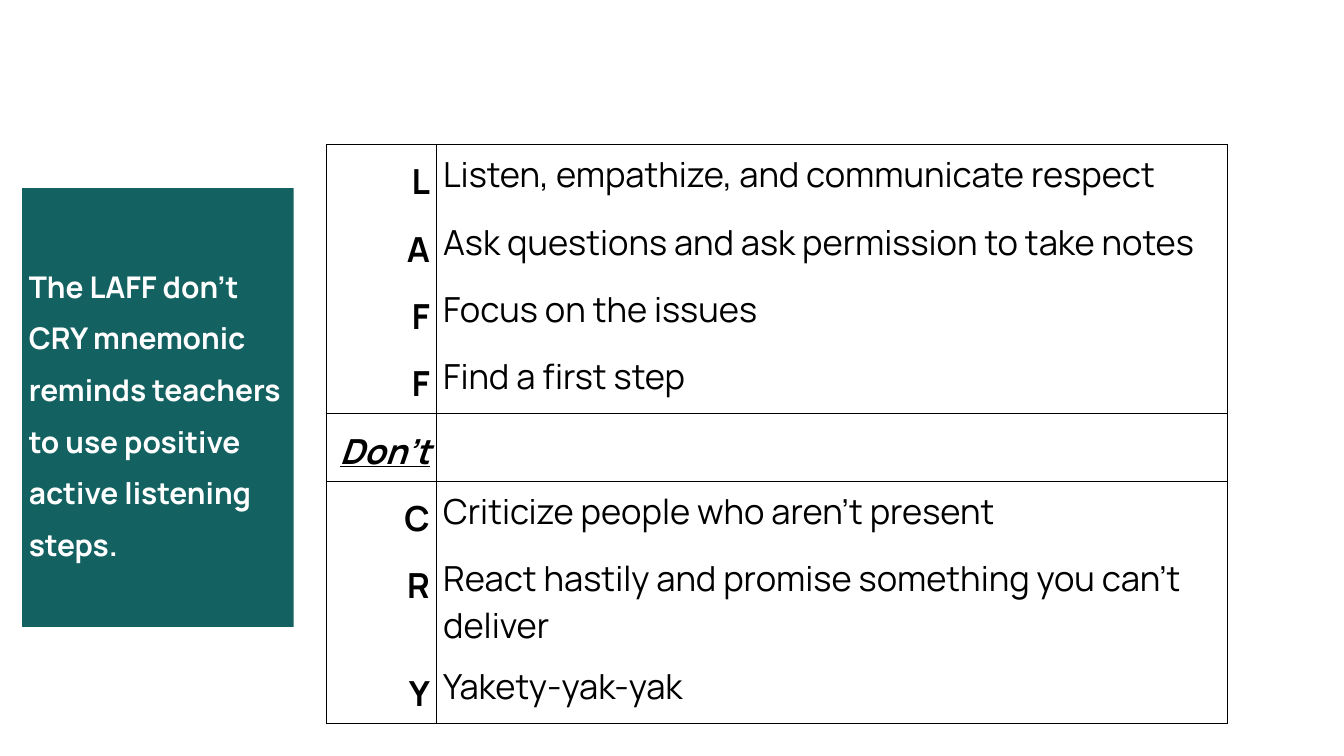
"""Build the LAFF don't CRY slide: a teal caption beside a mnemonic table."""
from lxml.etree import SubElement
from pptx import Presentation
from pptx.dml.color import RGBColor
from pptx.enum.shapes import MSO_SHAPE
from pptx.enum.text import MSO_ANCHOR, PP_ALIGN
from pptx.oxml.ns import qn
from pptx.util import Cm, Pt


def color(hex_string):
    return RGBColor.from_string(hex_string)


def write(frame, text, size=37, ink="000000", bold=False, italic=False,
          underline=False, align=PP_ALIGN.LEFT, spacing=1.0):
    frame.word_wrap = True
    paragraph = frame.paragraphs[0]
    paragraph.alignment = align
    paragraph.line_spacing = spacing
    run = paragraph.add_run()
    run.text = text
    font = run.font
    font.name, font.size = "Manrope", Pt(size)
    font.bold, font.italic, font.underline = bold, italic, underline
    font.color.rgb = color(ink)


STEPS = [
    ("L", "Listen, empathize, and communicate respect"),
    ("A", "Ask questions and ask permission to take notes"),
    ("F", "Focus on the issues"),
    ("F", "Find a first step"),
    ("Don’t", ""),
    ("C", "Criticize people who aren’t present"),
    ("R", "React hastily and promise something you can’t deliver"),
    ("Y", "Yakety-yak-yak"),
]
GROUP_STARTS = {0, 4, 5}
GROUP_ENDS = {3, 4, 7}
ROW_HEIGHT = Cm(2.32)
LETTER_WIDTH, STEP_WIDTH = Cm(4.16), Cm(29.9)
INSET = Cm(0.25)

deck = Presentation()
deck.slide_width, deck.slide_height = Cm(50.8), Cm(28.58)
slide = deck.slides.add_slide(deck.slide_layouts[6])

mnemonic = slide.shapes.add_table(
    len(STEPS), 2, Cm(12.34), Cm(5.46),
    LETTER_WIDTH + STEP_WIDTH, ROW_HEIGHT * len(STEPS)).table
mnemonic.first_row = mnemonic.horz_banding = False
mnemonic.columns[0].width, mnemonic.columns[1].width = LETTER_WIDTH, STEP_WIDTH

for index, (letter, step) in enumerate(STEPS):
    mnemonic.rows[index].height = ROW_HEIGHT
    letter_cell, step_cell = mnemonic.cell(index, 0), mnemonic.cell(index, 1)
    is_dont = letter == "Don’t"
    write(letter_cell.text_frame, letter, bold=True, italic=is_dont,
          underline=is_dont, align=PP_ALIGN.RIGHT, spacing=1.15)
    if step:
        write(step_cell.text_frame, step)
    edges = {"a:lnL": True, "a:lnR": True,
             "a:lnT": index in GROUP_STARTS, "a:lnB": index in GROUP_ENDS}
    for cell in (letter_cell, step_cell):
        cell.margin_left = cell.margin_right = INSET
        cell.margin_top = cell.margin_bottom = INSET
        properties = cell._tc.get_or_add_tcPr()
        for edge, drawn in edges.items():
            border = SubElement(properties, qn(edge), w=str(Pt(1)))
            if drawn:
                fill = SubElement(border, qn("a:solidFill"))
                SubElement(fill, qn("a:srgbClr"), val="000000")
            else:
                SubElement(border, qn("a:noFill"))
        cell.fill.background()

caption = slide.shapes.add_shape(
    MSO_SHAPE.RECTANGLE, Cm(0.84), Cm(7.11), Cm(10.26), Cm(16.59))
caption.shadow.inherit = False
caption.fill.solid()
caption.fill.fore_color.rgb = color("146161")
caption.line.fill.background()
caption_frame = caption.text_frame
caption_frame.vertical_anchor = MSO_ANCHOR.MIDDLE
caption_frame.margin_left = caption_frame.margin_right = INSET
caption_frame.margin_top = caption_frame.margin_bottom = INSET
write(caption_frame,
      "The LAFF don’t CRY mnemonic reminds teachers to use positive "
      "active listening steps.",
      size=32, ink="FFFFFF", bold=True, spacing=1.44)

deck.save("out.pptx")
